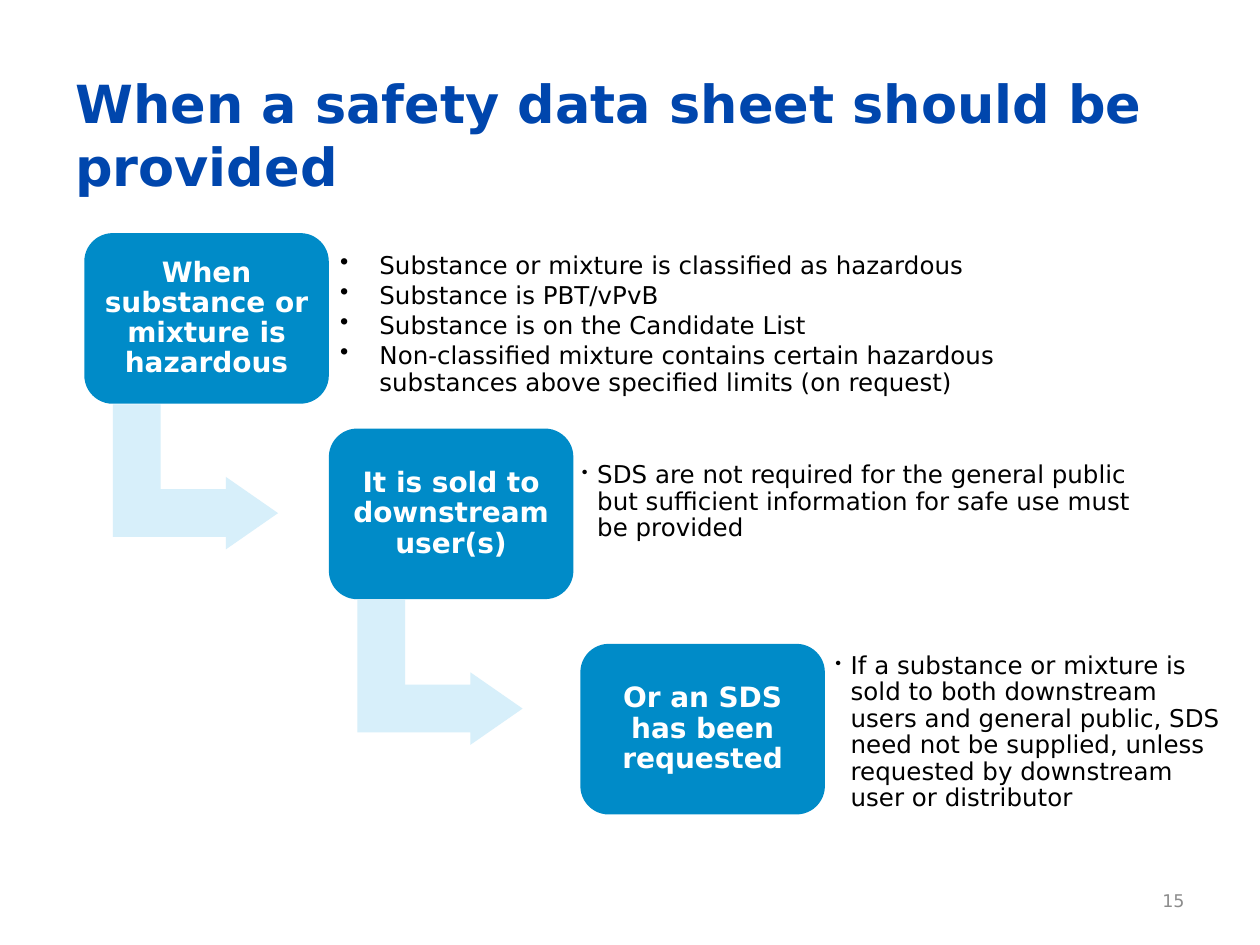
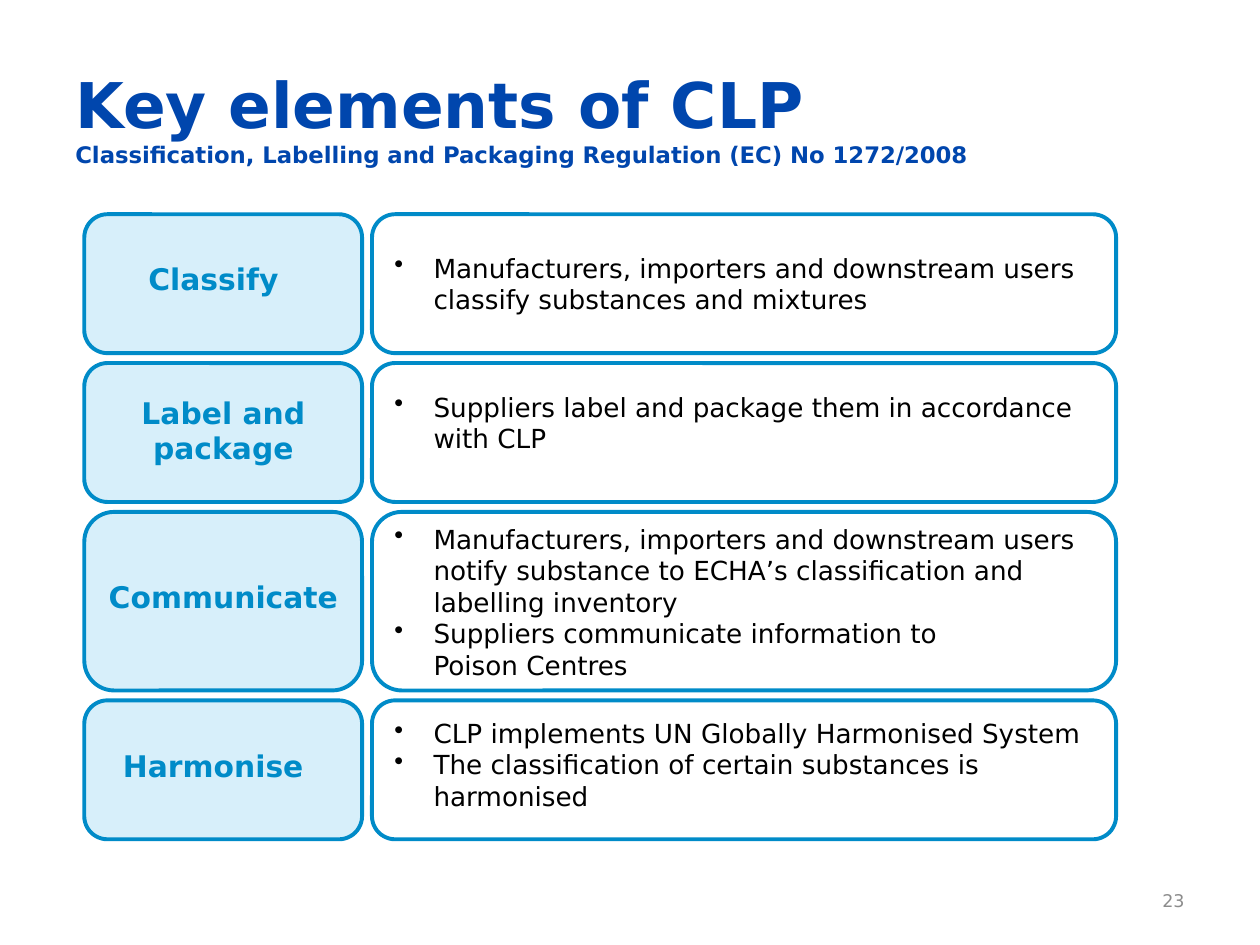
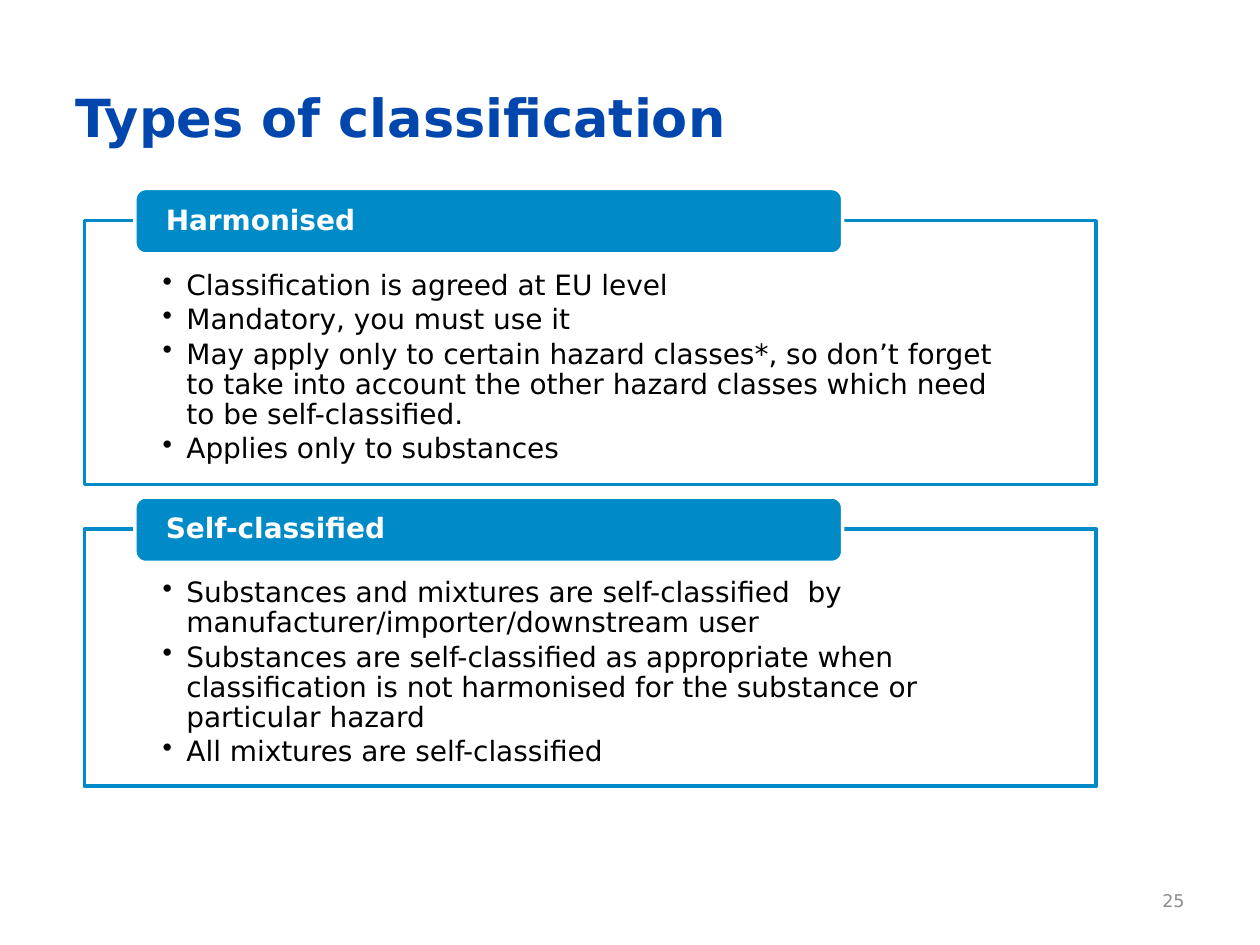
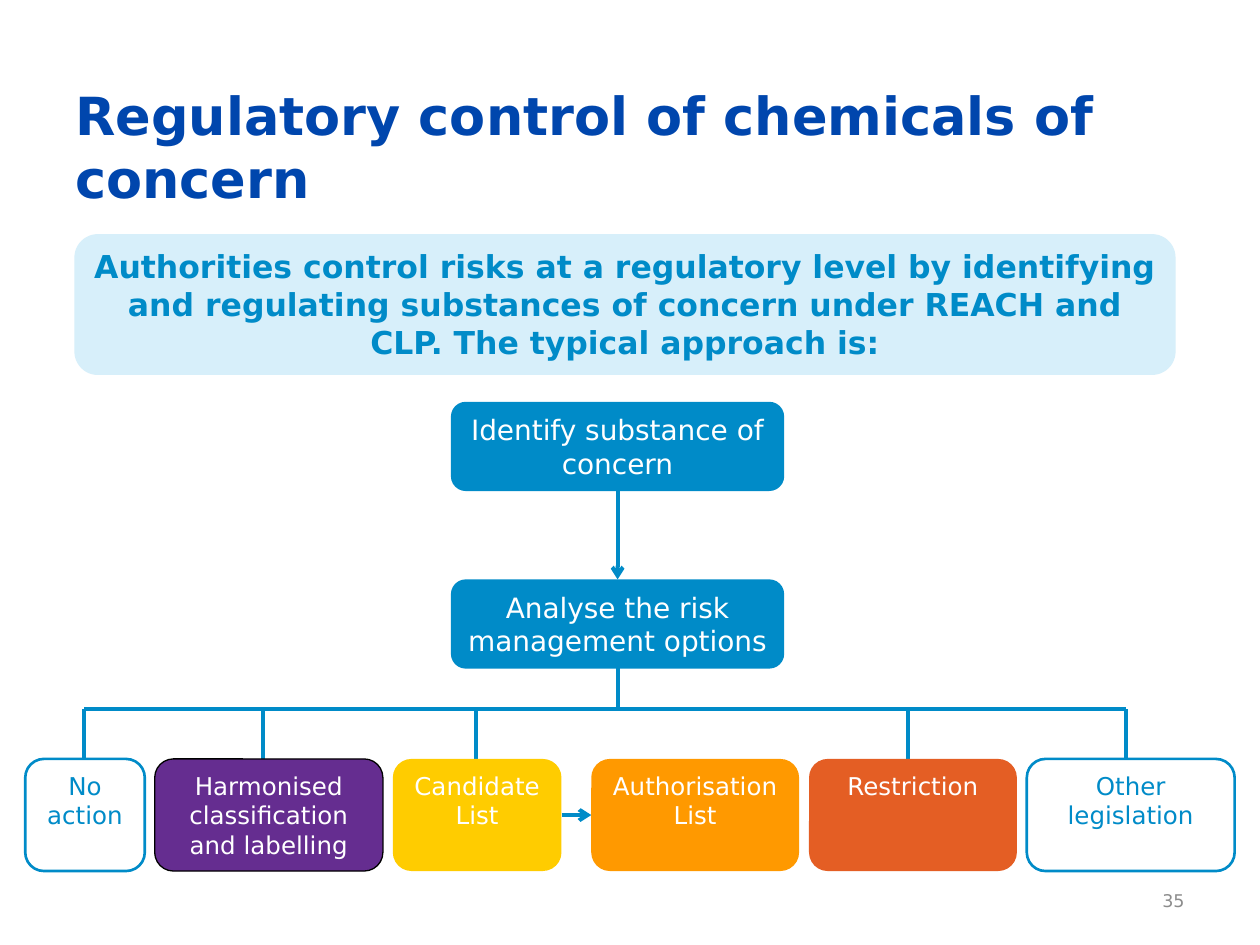
from lxml import etree
from pptx import Presentation
from pptx.dml.color import RGBColor
from pptx.enum.shapes import MSO_CONNECTOR, MSO_SHAPE
from pptx.enum.text import MSO_ANCHOR, PP_ALIGN
from pptx.oxml.ns import qn
from pptx.util import Cm, Pt

ROUND, RECT, BENT = (MSO_SHAPE.ROUNDED_RECTANGLE, MSO_SHAPE.RECTANGLE,
                     MSO_SHAPE.BENT_UP_ARROW)
STRAIGHT = MSO_CONNECTOR.STRAIGHT
TOP, MID = MSO_ANCHOR.TOP, MSO_ANCHOR.MIDDLE
LEFT, MIDDLE, RIGHT = PP_ALIGN.LEFT, PP_ALIGN.CENTER, PP_ALIGN.RIGHT

FONT = "DejaVu Sans"
HUES = {
    "title": "0046AD", "blue": "008BC8", "pale": "D7EFFA", "grey": "8C8C8C",
    "white": "FFFFFF", "black": "000000", "violet": "652D90",
    "yellow": "FFCC00", "amber": "FF9900", "red": "E45E24",
}

# Content: all places and sizes are in centimetres.
# Each step: box corner, label, text frame, bullet indent, bullet percent, points
STEPS = [
    ((1.7, 4.7), "When substance or mixture is hazardous",
     (6.71, 5.16, 14, 2.77), 0.79, 100,
     ["Substance or mixture is classified as hazardous",
      "Substance is PBT/vPvB",
      "Substance is on the Candidate List",
      "Non-classified mixture contains certain hazardous substances above "
      "specified limits (on request)"]),
    ((6.63, 8.64), "It is sold to downstream user(s)",
     (11.58, 8.74, 11.71, 2.77), 0.31, 70,
     ["SDS are not required for the general public but sufficient "
      "information for safe use must be provided"]),
    ((11.7, 12.98), "Or an SDS has been requested",
     (16.69, 12.52, 8.2, 4.5), 0.31, 70,
     ["If a substance or mixture is sold to both downstream users and general "
      "public, SDS need not be supplied, unless requested by downstream user "
      "or distributor"]),
]

# Each row: height, label, label frame, top and size of text, points
ROWS = [
    (2.8, "Classify", (1.7, 5.13, 5.21, 0.99), (4.95, 14.4, 2.18),
     ["Manufacturers, importers and downstream users classify substances "
      "and mixtures"]),
    (2.8, "Label and package", (1.9, 7.82, 5.21, 1.7), (7.75, 14.4, 2.18),
     ["Suppliers label and package them in accordance with CLP"]),
    (3.6, "Communicate", (1.9, 11.53, 5.21, 0.99), (10.41, 15.8, 4.11),
     ["Manufacturers, importers and downstream users notify substance to "
      "ECHA’s classification and\nlabelling inventory",
      "Suppliers communicate information to\nPoison Centres"]),
    (2.8, "Harmonise", (1.3, 14.94, 6, 0.99), (14.33, 14.4, 2.82),
     ["CLP implements UN Globally Harmonised System",
      "The classification of certain substances is harmonised"]),
]

# Each type: name, top and height of frame, points
TYPES = [
    ("Harmonised", 4.45, 5.32,
     ["Classification is agreed at EU level",
      "Mandatory, you must use it",
      "May apply only to certain hazard classes*, so don’t forget to take into "
      "account the other hazard classes which need to be self-classified.",
      "Applies only to substances"]),
    ("Self-classified", 10.67, 5.18,
     ["Substances and mixtures are self-classified  by "
      "manufacturer/importer/downstream user",
      "Substances are self-classified as appropriate when classification is "
      "not harmonised for the substance or particular hazard",
      "All mixtures are self-classified"]),
]

CLAIM = ("Authorities control risks at a regulatory level by identifying and "
         "regulating substances of concern under REACH and CLP. The typical "
         "approach is:")
STAGES = [("Identify substance of concern", 8.1),
          ("Analyse the risk management options", 11.68)]
# Each outcome: text, width, gap after, stem, fill, line, line width, font colour
ENDS = [
    ("No action", 2.41, 0.2, 1.7, "white", "blue", 1.5, "blue"),
    ("Harmonised classification and labelling", 4.6, 0.2, 5.3,
     "violet", "black", 0.75, "white"),
    ("Candidate List", 3.4, 0.6, 9.6, "yellow", None, 0, "white"),
    ("Authorisation List", 4.19, 0.2, None, "amber", None, 0, "white"),
    ("Restriction", 4.19, 0.2, 18.3, "red", None, 0, "white"),
    ("Other legislation", 4.19, 0.2, 22.7, "white", "blue", 1.5, "blue"),
]


def hue(name):
    return RGBColor.from_string(HUES[name])


def style(para, size, color, bold):
    """Set the font of every run in a paragraph."""
    for run in para.runs:
        font = run.font
        font.name, font.size, font.bold = FONT, Pt(size), bold
        font.color.rgb = hue(color)


def mark(para, hang, scale):
    """Give a paragraph a hanging bullet."""
    props = para._p.get_or_add_pPr()
    props.set("marL", str(Cm(hang)))
    props.set("indent", str(-Cm(hang)))
    etree.SubElement(props, qn("a:buSzPct")).set("val", str(scale * 1000))
    etree.SubElement(props, qn("a:buChar")).set("char", "•")


def write(shape, texts, size, color="black", bold=False, align=LEFT,
          anchor=TOP, pads=(0.25, 0.13, 0.25, 0.13), tight=0, hang=0,
          scale=100):
    """Fill a shape with paragraphs; tight is the share of size put after each."""
    frame = shape.text_frame
    frame.word_wrap, frame.vertical_anchor = True, anchor
    (frame.margin_left, frame.margin_top,
     frame.margin_right, frame.margin_bottom) = map(Cm, pads)
    for i, text in enumerate(texts):
        para = frame.add_paragraph() if i else frame.paragraphs[0]
        para.alignment = align
        for j, part in enumerate(text.split("\n")):
            if j:
                para.add_line_break()
            para.add_run().text = part
        style(para, size, color, bold)
        if tight:
            para.line_spacing = 0.9
            para.space_after = Pt(round(size * tight, 1))
        if hang:
            mark(para, hang, scale)
    return frame


def label(slide, place, texts, size, **look):
    box = slide.shapes.add_textbox(*map(Cm, place))
    return write(box, texts, size, **look)


def block(slide, kind, place, fill=None, line=None, width=2.25):
    shape = slide.shapes.add_shape(kind, *map(Cm, place))
    shape.shadow.inherit = False
    if fill:
        shape.fill.solid()
        shape.fill.fore_color.rgb = hue(fill)
    else:
        shape.fill.background()
    if line:
        shape.line.color.rgb = hue(line)
        shape.line.width = Pt(width)
    else:
        shape.line.fill.background()
    return shape


def link(slide, start, end, arrow=False):
    line = slide.shapes.add_connector(STRAIGHT, *map(Cm, start + end))
    line.line.color.rgb = hue("blue")
    line.line.width = Pt(2.25)
    if arrow:
        tip = etree.SubElement(line.line._get_or_add_ln(), qn("a:tailEnd"))
        tip.set("type", "arrow")
    etree.SubElement(line._element.spPr, qn("a:effectLst"))


def begin(deck, title, top, number, size=30):
    """Add a slide with its title and page number."""
    slide = deck.slides.add_slide(deck.slide_layouts[6])
    frame = label(slide, (1.27, top, 22.86, 3.18), [title], size,
                  color="title", bold=True, anchor=MID)
    label(slide, (18.2, 17.65, 5.93, 1.01), [number], 10, color="grey",
          align=RIGHT, anchor=MID)
    return slide, frame


def show_steps(deck):
    slide, _ = begin(deck, "When a safety data sheet should be provided",
                     1.12, "15")
    for i, (spot, name, place, hang, scale, points) in enumerate(STEPS):
        x, y = spot
        if i < len(STEPS) - 1:
            arrow = block(slide, BENT, (x + 0.78, y + 3.25, 2.92, 3.33), "pale")
            arrow.rotation = 90
            for k, value in enumerate((0.33, 0.25, 0.36)):
                arrow.adjustments[k] = value
        box = block(slide, ROUND, (x, y, 4.93, 3.44), "blue")
        write(box, [name], 16, "white", True, MIDDLE, MID, (0.16,) * 4, 0.35)
        label(slide, place, points, 14, anchor=MID, pads=(0.15,) * 4,
              tight=0.15, hang=hang, scale=scale)


def show_rows(deck):
    slide, frame = begin(
        deck, "Key elements of CLP\nClassification, Labelling and Packaging "
        "Regulation (EC) No 1272/2008", 0.76, "23", 36)
    frame.paragraphs[0].runs[1].font.size = Pt(13)
    y = 4.32
    for high, name, place, (top, wide, tall), points in ROWS:
        block(slide, ROUND, (1.7, y, 5.6, high), "pale", "blue")
        label(slide, place, [name], 17, color="blue", bold=True, align=MIDDLE)
        label(slide, (7.7, top, wide, tall), points, 15, hang=0.79)
        block(slide, ROUND, (7.5, y, 15, high), None, "blue")
        y += high + 0.2


def show_types(deck):
    slide, _ = begin(deck, "Types of classification", 0.76, "25")
    for name, y, high, points in TYPES:
        box = block(slide, RECT, (1.7, y, 20.4, high), "white", "blue", 2)
        write(box, points, 16, anchor=MID, pads=(1.58, 0.92, 1.58, 0.3),
              tight=0.15, hang=0.48)
        band = block(slide, ROUND, (2.72, y - 0.65, 14.27, 1.32),
                     "blue", "white", 2)
        write(band, [name], 16, "white", True, anchor=MID,
              pads=(0.56, 0, 0.56, 0), tight=0.35)


def show_flow(deck):
    slide, _ = begin(deck, "Regulatory control of chemicals of concern",
                     1.35, "35")
    claim = block(slide, ROUND, (1.5, 4.72, 22.2, 2.84), "pale")
    write(claim, [CLAIM], 18, "blue", True, MIDDLE)

    mid, rail, top, high, tall = 12.45, 14.3, 15.3, 2.26, 1.8
    stems = [end[3] for end in ENDS if end[3]]
    link(slide, (mid, 12), (mid, rail))
    for stem in stems:
        link(slide, (stem, rail), (stem, top + 0.4))
    link(slide, (stems[0], rail), (stems[-1], rail))

    for text, y in STAGES:
        box = block(slide, ROUND, (mid - 3.36, y, 6.72, tall), "blue")
        write(box, [text], 16, "white", align=MIDDLE)
    link(slide, (mid, STAGES[0][1] + tall), (mid, STAGES[1][1]), True)

    x = 0.51
    for text, wide, gap, _, fill, line, width, color in ENDS:
        box = block(slide, ROUND, (x, top, wide, high), fill, line, width)
        write(box, [text], 14, color, align=MIDDLE)
        x += wide
        if gap > 0.2:
            y = top + high / 2
            link(slide, (x, y), (x + gap, y), True)
        x += gap


def main():
    deck = Presentation()
    deck.slide_width, deck.slide_height = Cm(25.4), Cm(19.05)
    for show in (show_steps, show_rows, show_types, show_flow):
        show(deck)
    deck.save("out.pptx")


if __name__ == "__main__":
    main()
